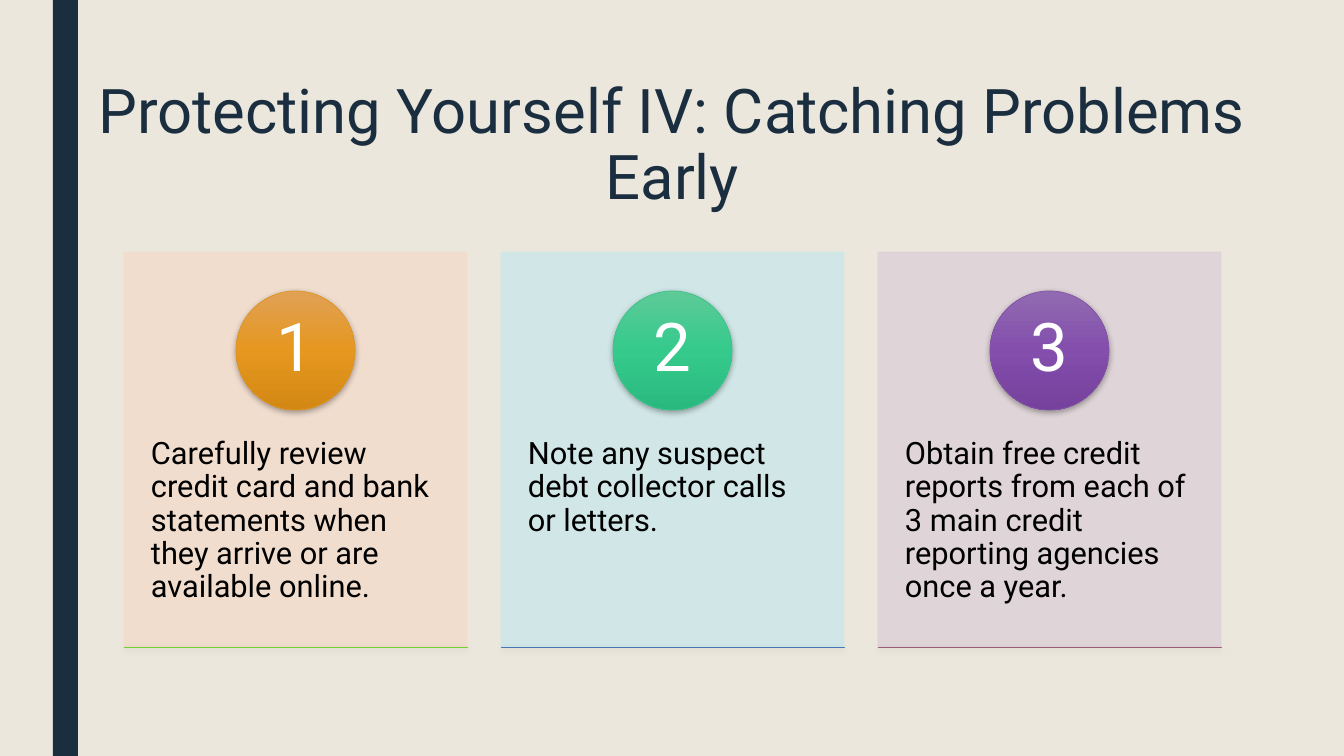
from lxml.etree import SubElement
from pptx import Presentation
from pptx.dml.color import RGBColor as RGB
from pptx.enum.shapes import MSO_SHAPE as SHAPE
from pptx.enum.text import MSO_ANCHOR as ANCHOR, MSO_AUTO_SIZE as AUTO, PP_ALIGN as ALIGN
from pptx.oxml.ns import qn
from pptx.util import Pt

SCALE = 914400 / 100.8
COLORS = {"bg": "EBE7DD", "navy": "1A2E40", "black": "000000", "white": "FFFFFF"}
CARDS = [
    {"text": "Carefully review credit card and bank statements when they arrive or are available online.",
     "card": "F2DDCD", "circle": ["E1A155", "E5971F", "D38814"], "rim": "DC9528",
     "base": ["83D659", "70D82A", "62C71E"], "edge": "72D032"},
    {"text": "Note any suspect debt collector calls or letters.",
     "card": "CFE8E9", "circle": ["5ECA98", "35CA8C", "29B97E"], "rim": "3CC38B",
     "base": ["6486BE", "4275BB", "3567AB"], "edge": "4776B5"},
    {"text": "Obtain free credit reports from each of 3 main credit reporting agencies once a year.",
     "card": "DED2D7", "circle": ["916BB1", "834EAC", "75419C"], "rim": "8352A7",
     "base": ["A57388", "9D5A78", "8E4D6A"], "edge": "9A5D78"},
]


def px(*lengths):
    return [round(n * SCALE) for n in lengths]


def write(sp, text, size, color, align, spacing, anchor, margins):
    tf = sp.text_frame
    tf.word_wrap = True
    tf.auto_size = AUTO.NONE
    tf.vertical_anchor = anchor
    tf.margin_left, tf.margin_top = px(*margins)
    tf.margin_right, tf.margin_bottom = px(*margins)
    p = tf.paragraphs[0]
    p.alignment = align
    p.line_spacing = spacing
    r = p.add_run()
    r.text = text
    r.font.name = "Roboto"
    r.font.size = Pt(size)
    r.font.color.rgb = RGB.from_string(COLORS[color])


prs = Presentation()
prs.slide_width, prs.slide_height = px(1344, 756)
s = prs.slides.add_slide(prs.slide_layouts[5])
s.background.fill.solid()
s.background.fill.fore_color.rgb = RGB.from_string(COLORS["bg"])

title = s.shapes.title
title.left, title.top, title.width, title.height = px(71, 76, 1203, 163)
write(title, "Protecting Yourself IV: Catching Problems Early", 44, "navy",
      ALIGN.CENTER, 0.89, ANCHOR.TOP, (10, 5))

bar = s.shapes.add_shape(SHAPE.RECTANGLE, *px(53, 0, 25, 756))
bar.shadow.inherit = False
bar.fill.solid()
bar.fill.fore_color.rgb = RGB.from_string(COLORS["navy"])
bar.line.fill.background()

for i, item in enumerate(CARDS):
    x = 124 + i * 377

    card = s.shapes.add_shape(SHAPE.RECTANGLE, *px(x, 252, 343, 395))
    card.shadow.inherit = False
    card.fill.solid()
    card.fill.fore_color.rgb = RGB.from_string(item["card"])
    card.line.color.rgb = RGB.from_string(item["card"])
    card.line.width = Pt(0.5)
    for clr in card.element.spPr.iter(qn("a:srgbClr")):
        SubElement(clr, qn("a:alpha"), val="90000")

    body = s.shapes.add_textbox(*px(x, 402, 343, 237))
    write(body, item["text"], 22, "black", ALIGN.LEFT, 0.9, ANCHOR.TOP, (27, 36))

    for kind, box, stops, line in [
        (SHAPE.OVAL, (x + 112, 291, 119, 119), item["circle"], item["rim"]),
        (SHAPE.RECTANGLE, (x, 647, 343, 0), item["base"], item["edge"]),
    ]:
        sp = s.shapes.add_shape(kind, *px(*box))
        sp.fill.gradient()
        sp.fill.gradient_angle = 270
        sp.line.color.rgb = RGB.from_string(line)
        sp.line.width = Pt(0.5)
        sp.shadow.inherit = False
        spPr = sp.element.spPr
        gs_list = spPr.find(".//" + qn("a:gsLst"))
        gs_list.clear()
        for n, color in enumerate(stops):
            gs = SubElement(gs_list, qn("a:gs"), pos=str(n * 50000))
            SubElement(gs, qn("a:srgbClr"), val=color)
        shadow = SubElement(spPr.find(qn("a:effectLst")), qn("a:outerShdw"),
                            blurRad=str(Pt(4.5)), dist=str(Pt(1.5)),
                            dir="5400000", rotWithShape="0")
        clr = SubElement(shadow, qn("a:srgbClr"), val=COLORS["black"])
        SubElement(clr, qn("a:alpha"), val="35000")

    number = s.shapes.add_textbox(*px(x + 129, 308, 84, 84))
    write(number, str(i + 1), 48, "white", ALIGN.CENTER, 0.9, ANCHOR.MIDDLE, (9, 1))

prs.save("out.pptx")
